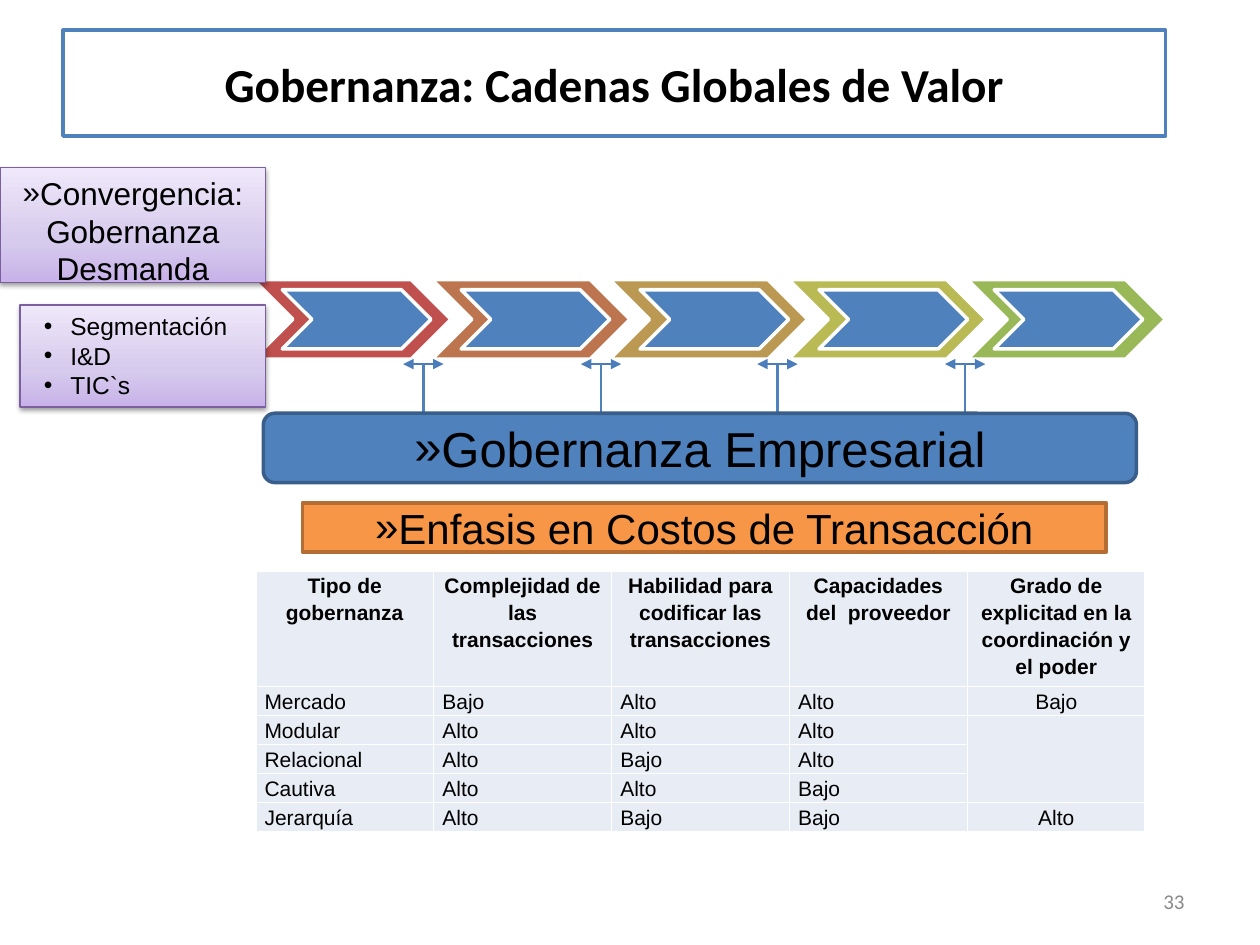
"""Build the slide on governance in global value chains."""
from dataclasses import dataclass

from lxml import etree
from pptx import Presentation
from pptx.dml.color import RGBColor
from pptx.enum.shapes import MSO_CONNECTOR, MSO_SHAPE
from pptx.enum.text import MSO_ANCHOR, PP_ALIGN
from pptx.oxml.ns import qn
from pptx.util import Inches, Pt

RECTANGLE, ROUNDED = MSO_SHAPE.RECTANGLE, MSO_SHAPE.ROUNDED_RECTANGLE
CHEVRON, STRAIGHT = MSO_SHAPE.CHEVRON, MSO_CONNECTOR.STRAIGHT
LEFT, CENTER = PP_ALIGN.LEFT, PP_ALIGN.CENTER
RIGHT, JUSTIFY = PP_ALIGN.RIGHT, PP_ALIGN.JUSTIFY
TOP, MIDDLE = MSO_ANCHOR.TOP, MSO_ANCHOR.MIDDLE

BLACK, WHITE = RGBColor(0, 0, 0), RGBColor(255, 255, 255)
GRAY = RGBColor(0x89, 0x89, 0x89)
BLUE = RGBColor(0x4F, 0x81, 0xBD)
ARROW_BLUE = RGBColor(0x4A, 0x7D, 0xBA)
DARK_BLUE = RGBColor(0x39, 0x5E, 0x89)
ORANGE, BROWN = RGBColor(0xF7, 0x96, 0x46), RGBColor(0xB4, 0x6D, 0x33)
PURPLE = RGBColor(0x7C, 0x5F, 0x9F)
CELL_FILL = RGBColor(0xE8, 0xEC, 0xF4)
LILAC_STOPS = (
    (0, RGBColor(0xC8, 0xB2, 0xE9)),
    (35, RGBColor(0xD6, 0xCA, 0xED)),
    (100, RGBColor(0xEF, 0xE8, 0xFA)),
)


@dataclass
class Stage:
    left: float
    color: RGBColor
    core_left: float


@dataclass
class Panel:
    lines: list[str]
    area: tuple[float, float, float, float]
    line: RGBColor
    size: float
    indent: float
    fill: RGBColor | None = None
    kind: int = RECTANGLE
    line_width: float = 2
    bullet: str = "»"
    margin: float = 0
    align: int = CENTER
    anchor: int = MIDDLE


STAGES = [
    Stage(2.01, RGBColor(0xBF, 0x50, 0x4D), 2.24),
    Stage(3.43, RGBColor(0xBD, 0x75, 0x4F), 3.66),
    Stage(4.84, RGBColor(0xBB, 0x99, 0x52), 5.08),
    Stage(6.26, RGBColor(0xBA, 0xBA, 0x55), 6.5),
    Stage(7.68, RGBColor(0x99, 0xB9, 0x58), 7.89),
]
JUNCTIONS = [3.36, 4.77, 6.17, 7.66]
PANELS = [
    Panel(["Segmentación", "I&D", "TIC`s"], (0.16, 2.42, 1.95, 0.81), PURPLE, 14, -0.21,
          line_width=0.75, bullet="•", margin=0.3, align=LEFT, anchor=TOP),
    Panel(["Gobernanza Empresarial"], (2.09, 3.28, 6.93, 0.55), DARK_BLUE, 28, -0.19,
          fill=BLUE, kind=ROUNDED),
    Panel(["Enfasis en Costos de Transacción"], (2.4, 3.99, 6.38, 0.39), BROWN, 24, -0.17,
          fill=ORANGE),
    Panel(["Convergencia: Gobernanza Desmanda"], (0, 1.33, 2.11, 0.91), PURPLE, 18, -0.12,
          line_width=0.75, anchor=TOP),
]
ROWS = [
    ["Tipo de gobernanza", "Complejidad de las transacciones",
     "Habilidad para codificar las transacciones", "Capacidades del  proveedor",
     "Grado de explicitad en la coordinación y el poder"],
    ["Mercado", "Bajo", "Alto", "Alto", "Bajo"],
    ["Modular", "Alto", "Alto", "Alto", ""],
    ["Relacional", "Alto", "Bajo", "Alto", ""],
    ["Cautiva", "Alto", "Alto", "Bajo", ""],
    ["Jerarquía", "Alto", "Bajo", "Bajo", "Alto"],
]


def add_element(parent, tag: str, **attributes):
    """Append a DrawingML child element."""
    return etree.SubElement(parent, qn(tag), attributes)


def write(paragraph, text: str, *, size: float, font="Arial", color=BLACK, bold=False,
          align=LEFT) -> None:
    """Write one formatted span into a paragraph."""
    paragraph.alignment = align
    span = paragraph.add_run()
    span.text = text
    span.font.size, span.font.name, span.font.bold = Pt(size), font, bold
    span.font.color.rgb = color


def set_bullet(paragraph, mark: str, margin: float, indent: float) -> None:
    """Give a paragraph a black bullet with its indents."""
    properties = paragraph._p.get_or_add_pPr()
    properties.set("marL", str(Inches(margin)))
    properties.set("indent", str(Inches(indent)))
    color = add_element(properties, "a:buClr")
    add_element(color, "a:srgbClr", val=str(BLACK))
    add_element(properties, "a:buFont", typeface="Arial")
    add_element(properties, "a:buChar", char=mark)


def add_block(page, kind: int, area, fill, line: RGBColor, width: float = 2):
    """Add a preset shape, without fill when none is given."""
    shape = page.shapes.add_shape(kind, *map(Inches, area))
    shape.shadow.inherit = False
    if fill is not None:
        shape.fill.solid()
        shape.fill.fore_color.rgb = fill
    shape.line.color.rgb = line
    shape.line.width = Pt(width)
    return shape


def set_lilac(shape) -> None:
    """Apply the lilac gradient and its soft shadow."""
    shape.fill.gradient()
    shape.fill.gradient_angle = 90
    stops = shape._element.spPr.find(qn("a:gradFill")).find(qn("a:gsLst"))
    for stop in list(stops):
        stops.remove(stop)
    for position, color in LILAC_STOPS:
        stop = add_element(stops, "a:gs", pos=str(position * 1000))
        add_element(stop, "a:srgbClr", val=str(color))
    effects = shape._element.spPr.find(qn("a:effectLst"))
    shadow = add_element(effects, "a:outerShdw", blurRad=str(Pt(3.1)), dist=str(Pt(1.6)),
                         dir="5400000", rotWithShape="0")
    shade = add_element(shadow, "a:srgbClr", val=str(BLACK))
    add_element(shade, "a:alpha", val="38000")


def add_panel(page, panel: Panel) -> None:
    """Add a bulleted panel."""
    box = add_block(page, panel.kind, panel.area, panel.fill, panel.line, panel.line_width)
    if panel.fill is None:
        set_lilac(box)
    frame = box.text_frame
    frame.word_wrap, frame.vertical_anchor = True, panel.anchor
    for index, text in enumerate(panel.lines):
        paragraph = frame.add_paragraph() if index else frame.paragraphs[0]
        write(paragraph, text, size=panel.size, align=panel.align)
        set_bullet(paragraph, panel.bullet, panel.margin, panel.indent)


def add_line(page, start, end, color: RGBColor, arrows: bool = False) -> None:
    """Add a straight line, with arrowheads at both ends on request."""
    line = page.shapes.add_connector(STRAIGHT, *map(Inches, (*start, *end)))
    line.line.color.rgb = color
    line.line.width = Pt(1.5)
    if arrows:
        for tag in ("a:headEnd", "a:tailEnd"):
            add_element(line.line._get_or_add_ln(), tag, type="triangle")
    add_element(line._element.spPr, "a:effectLst")


def format_cell(cell, text: str, align: int, bold: bool) -> None:
    """Write a table cell with its fill and white borders."""
    cell.margin_left = cell.margin_right = Inches(0.07)
    cell.margin_top = cell.margin_bottom = 0
    paragraph = cell.text_frame.paragraphs[0]
    paragraph.line_spacing = 1.15
    if text:
        write(paragraph, text, size=12, bold=bold, align=align)
    else:
        add_element(paragraph._p, "a:endParaRPr", sz="1200")
    properties = cell._tc.get_or_add_tcPr()
    for side in ("a:lnL", "a:lnR", "a:lnT", "a:lnB"):
        border = add_element(properties, side, w=str(Pt(1)))
        add_element(add_element(border, "a:solidFill"), "a:srgbClr", val=str(WHITE))
    cell.fill.solid()
    cell.fill.fore_color.rgb = CELL_FILL


def add_governance_table(page) -> None:
    """Add the table of governance types."""
    area = map(Inches, (2.03, 4.53, 7.06, 2.07))
    table = page.shapes.add_table(len(ROWS), len(ROWS[0]), *area).table
    for row_index, texts in enumerate(ROWS):
        table.rows[row_index].height = Inches(0.23 if row_index else 0.92)
        for column, text in enumerate(texts):
            centered = row_index == 0 or column == len(texts) - 1
            format_cell(table.cell(row_index, column), text,
                        CENTER if centered else JUSTIFY, row_index == 0)
    table.cell(2, 4).merge(table.cell(4, 4))


def main() -> None:
    """Build and save the deck."""
    deck = Presentation()
    deck.slide_width, deck.slide_height = Inches(10), Inches(7.5)
    page = deck.slides.add_slide(deck.slide_layouts[5])
    title = page.shapes.title
    title.left, title.top, title.width, title.height = map(Inches, (0.5, 0.24, 8.75, 0.84))
    title.fill.solid()
    title.fill.fore_color.rgb = WHITE
    title.line.color.rgb, title.line.width = BLUE, Pt(2)
    title.text_frame.vertical_anchor = MIDDLE
    write(title.text_frame.paragraphs[0], "Gobernanza: Cadenas Globales de Valor",
          size=27, font="Calibri", bold=True, align=CENTER)
    for stage in STAGES:
        add_block(page, CHEVRON, (stage.left, 2.22, 1.57, 0.63), stage.color, WHITE)
        add_block(page, CHEVRON, (stage.core_left, 2.3, 1.18, 0.47), BLUE, WHITE)
    for center in JUNCTIONS:
        add_line(page, (center + 0.16, 2.89), (center - 0.16, 2.89), ARROW_BLUE, arrows=True)
        add_line(page, (center, 2.89), (center, 3.44), BLUE)
    add_governance_table(page)
    for panel in PANELS:
        add_panel(page, panel)
    number = page.shapes.add_textbox(*map(Inches, (7.17, 6.95, 2.33, 0.4))).text_frame
    number.word_wrap, number.vertical_anchor = True, MIDDLE
    write(number.paragraphs[0], "33", size=12, font="Calibri", color=GRAY, align=RIGHT)
    deck.save("out.pptx")


if __name__ == "__main__":
    main()
